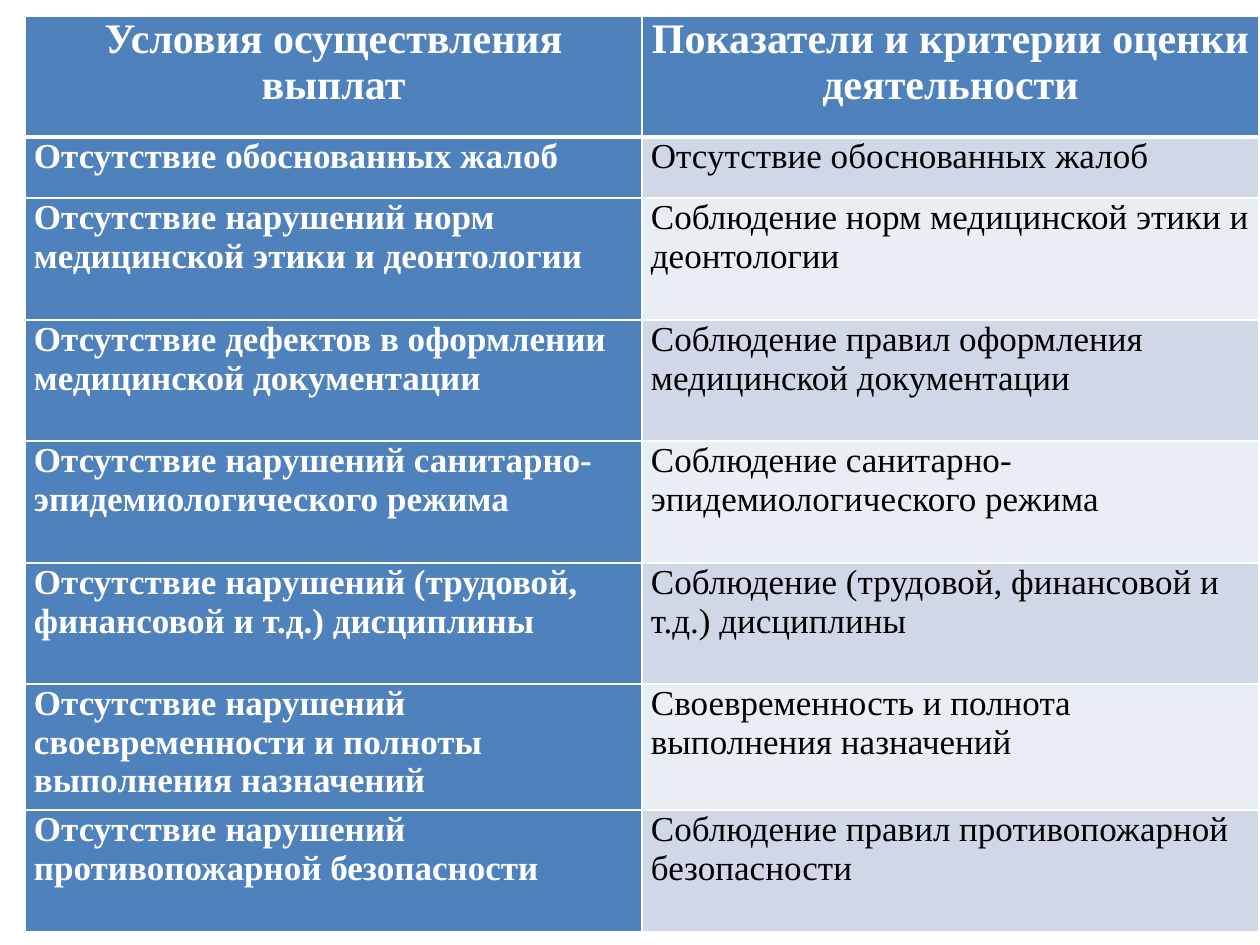
from dataclasses import dataclass

from lxml.etree import SubElement
from pptx import Presentation
from pptx.dml.color import RGBColor
from pptx.enum.text import PP_ALIGN
from pptx.oxml.ns import qn
from pptx.util import Pt

HEADER = ("Условия осуществления выплат", "Показатели и критерии оценки деятельности")
CRITERIA = [
    ("Отсутствие обоснованных жалоб", "Отсутствие обоснованных жалоб"),
    ("Отсутствие нарушений норм медицинской этики и деонтологии",
     "Соблюдение норм медицинской этики и деонтологии"),
    ("Отсутствие дефектов в оформлении медицинской документации",
     "Соблюдение правил оформления медицинской документации"),
    ("Отсутствие нарушений санитарно-эпидемиологического режима",
     "Соблюдение санитарно-эпидемиологического режима"),
    ("Отсутствие нарушений (трудовой, финансовой и т.д.) дисциплины",
     "Соблюдение (трудовой, финансовой и т.д.) дисциплины"),
    ("Отсутствие нарушений своевременности и полноты выполнения назначений",
     "Своевременность и полнота выполнения назначений"),
    ("Отсутствие нарушений противопожарной безопасности",
     "Соблюдение правил противопожарной безопасности"),
]
ROWS = [HEADER, *CRITERIA]

# Lengths in px, 126 to the inch
SLIDE_WIDTH, SLIDE_HEIGHT = 1260, 945
LEFT, TOP, COLUMN_WIDTH = 25, 16, 617
ROW_HEIGHTS = [121, 61, 122, 121, 122, 121, 126, 122]
SIDE_INSET = 9


@dataclass(frozen=True)
class Theme:
    font: str = "Times New Roman"
    header_size: int = 24
    body_size: int = 20
    accent: str = "4F81BD"
    bands: tuple = ("D0D8E8", "E9EDF4")
    light: str = "FFFFFF"
    dark: str = "000000"
    thin: int = 1
    thick: int = 3


THEME = Theme()


def px(length):
    return round(length * 914400 / 126)


def add_borders(cell, row):
    """White rules, thick between the header and the first body row."""
    widths = {
        "L": THEME.thin,
        "R": THEME.thin,
        "T": THEME.thick if row == 1 else THEME.thin,
        "B": THEME.thick if row == 0 else THEME.thin,
    }
    properties = cell._tc.get_or_add_tcPr()
    for side, width in widths.items():
        line = SubElement(properties, qn(f"a:ln{side}"), w=str(Pt(width)))
        fill = SubElement(line, qn("a:solidFill"))
        SubElement(fill, qn("a:srgbClr"), val=THEME.light)


def fill_cell(cell, text, row, column):
    is_header = row == 0
    is_accent = is_header or column == 0
    add_borders(cell, row)
    cell.fill.solid()
    color = THEME.accent if is_accent else THEME.bands[(row - 1) % 2]
    cell.fill.fore_color.rgb = RGBColor.from_string(color)
    cell.margin_left = cell.margin_right = px(SIDE_INSET)
    cell.margin_top = cell.margin_bottom = 0

    para = cell.text_frame.paragraphs[0]
    para.alignment = PP_ALIGN.CENTER if is_header else PP_ALIGN.LEFT
    span = para.add_run()
    span.text = text
    span.font.name = THEME.font
    span.font.size = Pt(THEME.header_size if is_header else THEME.body_size)
    span.font.bold = is_accent
    span.font.color.rgb = RGBColor.from_string(THEME.light if is_accent else THEME.dark)


def main():
    deck = Presentation()
    deck.slide_width, deck.slide_height = px(SLIDE_WIDTH), px(SLIDE_HEIGHT)
    page = deck.slides.add_slide(deck.slide_layouts[6])
    columns = len(HEADER)
    table = page.shapes.add_table(
        len(ROWS), columns, px(LEFT), px(TOP),
        px(COLUMN_WIDTH * columns), px(sum(ROW_HEIGHTS)),
    ).table
    for column in table.columns:
        column.width = px(COLUMN_WIDTH)
    for row, (texts, height) in enumerate(zip(ROWS, ROW_HEIGHTS)):
        table.rows[row].height = px(height)
        for column, text in enumerate(texts):
            fill_cell(table.cell(row, column), text, row, column)
    deck.save("out.pptx")


if __name__ == "__main__":
    main()
